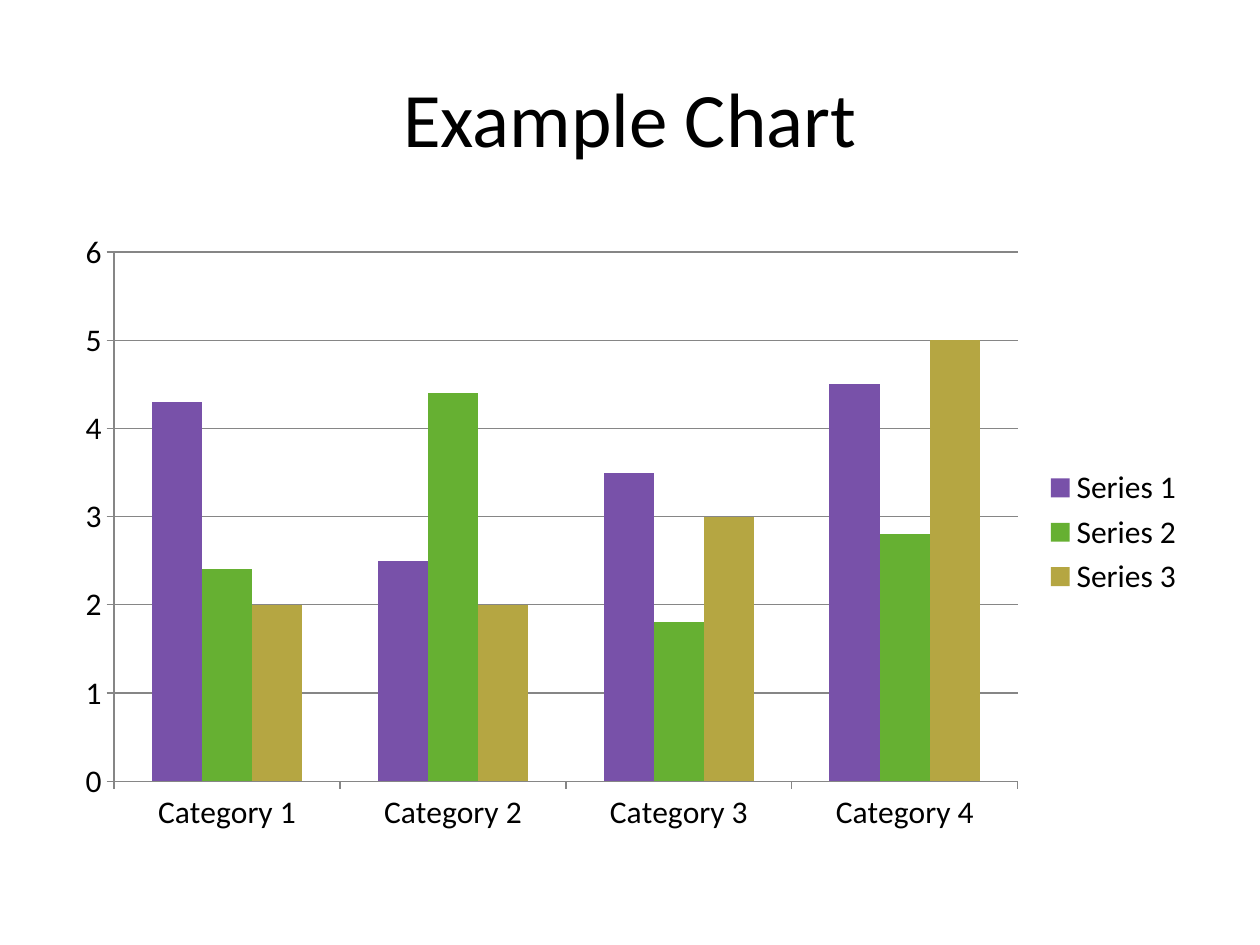
from pptx import Presentation
from pptx.chart.data import CategoryChartData
from pptx.dml.color import RGBColor
from pptx.enum.chart import XL_CHART_TYPE, XL_LEGEND_POSITION, XL_TICK_MARK
from pptx.enum.text import MSO_ANCHOR, PP_ALIGN
from pptx.util import Inches, Pt

COLUMN = XL_CHART_TYPE.COLUMN_CLUSTERED
RIGHT = XL_LEGEND_POSITION.RIGHT
OUTSIDE = XL_TICK_MARK.OUTSIDE
MIDDLE = MSO_ANCHOR.MIDDLE
CENTER = PP_ALIGN.CENTER

FACE = "Calibri"
BLACK = "000000"
GRAY = "868686"
SERIES = [
    ("Series 1", (4.3, 2.5, 3.5, 4.5), "7851A9"),
    ("Series 2", (2.4, 4.4, 1.8, 2.8), "66B032"),
    ("Series 3", (2, 2, 3, 5), "B5A642"),
]


def paint(color, value):
    """Set a color format from a hex string."""
    color.rgb = RGBColor.from_string(value)


def style(font, size):
    """Give a font the slide's face and color at a point size."""
    font.name = FACE
    font.size = Pt(size)
    paint(font.color, BLACK)


def add_title(slide, box, text):
    """Place the centered title in the box."""
    frame = slide.shapes.add_textbox(*box).text_frame
    frame.word_wrap = True
    frame.vertical_anchor = MIDDLE
    frame.text = text
    line = frame.paragraphs[0]
    line.alignment = CENTER
    style(line.runs[0].font, 44)


def add_columns(slide, box):
    """Place the clustered column chart in the box."""
    data = CategoryChartData()
    data.categories = [f"Category {n}" for n in range(1, 5)]
    for name, values, _ in SERIES:
        data.add_series(name, values)
    chart = slide.shapes.add_chart(COLUMN, *box, data).chart
    style(chart.font, 18)
    chart.has_title = False
    chart.has_legend = True
    chart.legend.position = RIGHT
    chart.legend.include_in_layout = False

    plot = chart.plots[0]
    plot.vary_by_categories = False
    plot.gap_width = 150
    for series, (_, _, color) in zip(plot.series, SERIES):
        series.format.fill.solid()
        paint(series.format.fill.fore_color, color)

    scale = chart.value_axis
    scale.minimum_scale, scale.maximum_scale, scale.major_unit = 0, 6, 1
    scale.has_major_gridlines = True
    for axis in (chart.category_axis, scale):
        axis.major_tick_mark = OUTSIDE
    for part in (chart.category_axis, scale, scale.major_gridlines):
        part.format.line.width = Pt(0.75)
        paint(part.format.line.color, GRAY)


def main():
    """Build and save the slide."""
    deck = Presentation()
    deck.slide_width, deck.slide_height = Inches(10), Inches(7.5)
    slide = deck.slides.add_slide(deck.slide_layouts[6])
    left, width = Inches(0.5), Inches(9)
    add_title(slide, (left, Inches(0.3), width, Inches(1.25)), "Example Chart")
    add_columns(slide, (left, Inches(1.75), width, Inches(4.95)))
    deck.save("out.pptx")


if __name__ == "__main__":
    main()
